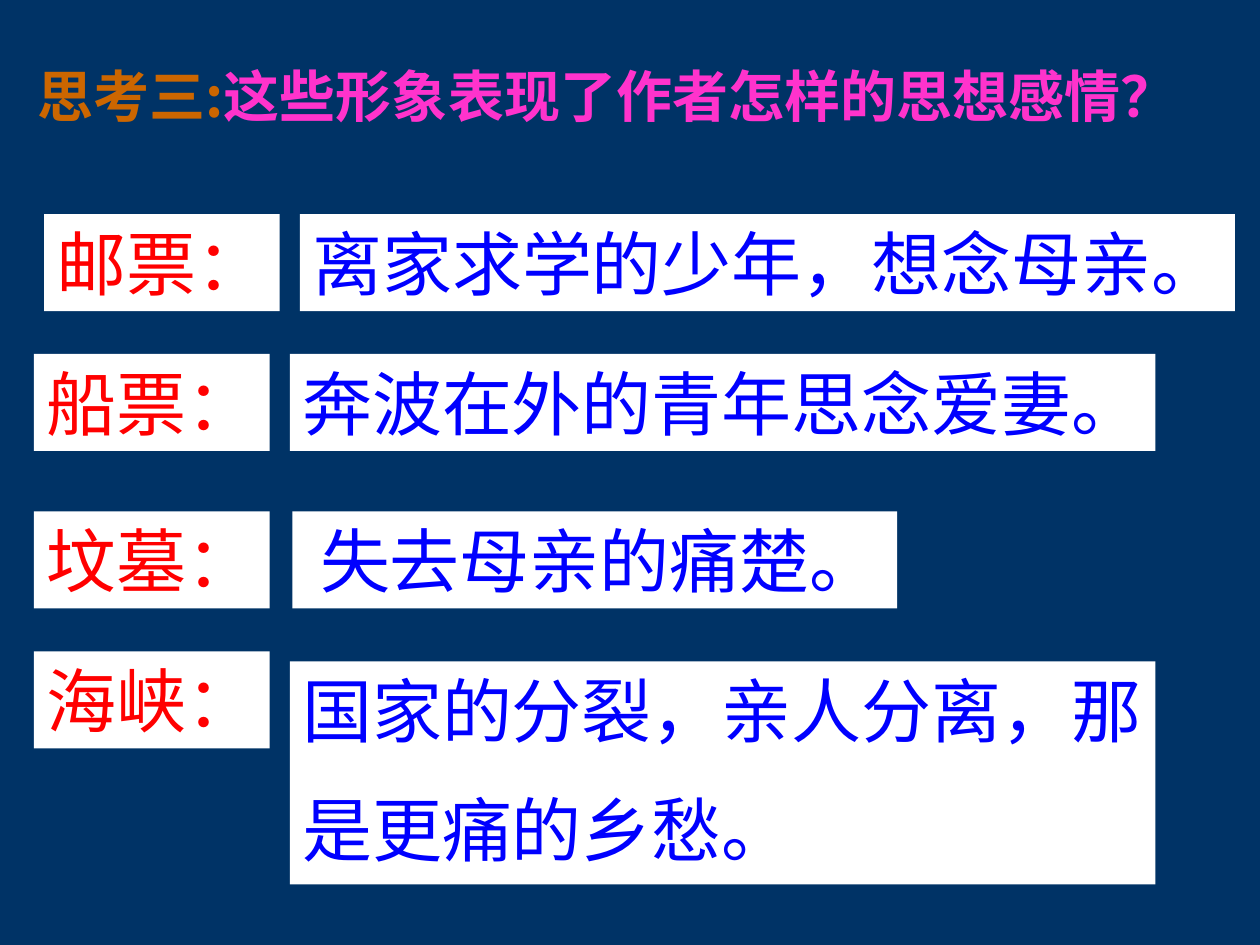
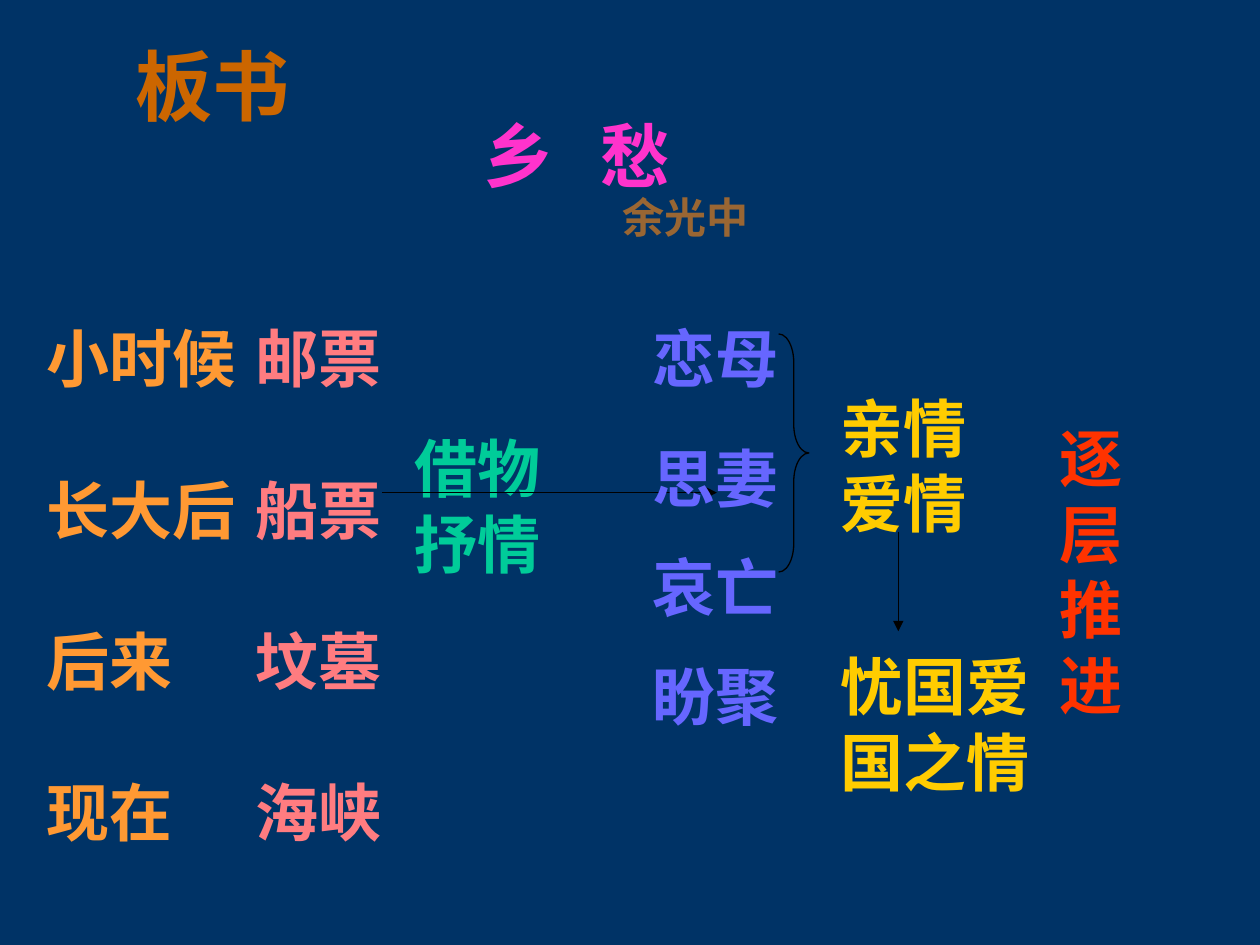
import pptx
import pptx.dml.color
import pptx.enum.shapes
import pptx.enum.text
import pptx.oxml.ns
import pptx.util
from lxml import etree
from pptx.util import Inches

SHAPES = pptx.enum.shapes.MSO_SHAPE
ANCHOR = pptx.enum.text.MSO_ANCHOR
qn = pptx.oxml.ns.qn

NAVY, WHITE, BLACK = "003366", "FFFFFF", "000000"
ORANGE, PINK, RED, BLUE = "CC6600", "FF33CC", "FF0000", "0000FF"
BROWN, AMBER, CORAL, GREEN = "996633", "FF9933", "FF7C80", "00CC99"
VIOLET, YELLOW, SCARLET = "6666FF", "FFCC00", "FF3300"


def rgb(value):
    return pptx.dml.color.RGBColor.from_string(value)


class Deck:
    """Holds the shared style and the current slide."""

    font = "Arial"
    title_font = "Noto Sans CJK SC"
    leading = 1.2

    def __init__(self):
        self.prs = pptx.Presentation()
        self.prs.slide_width = Inches(10)
        self.prs.slide_height = Inches(7.5)
        self.s = None

    def slide(self):
        self.s = self.prs.slides.add_slide(self.prs.slide_layouts[6])
        fill = self.s.background.fill
        fill.solid()
        fill.fore_color.rgb = rgb(NAVY)

    def run(self, p, text, size, color, bold, font):
        r = p.add_run()
        r.text = text
        r.font.size = pptx.util.Pt(size)
        r.font.bold = bold
        r.font.color.rgb = rgb(color)
        r.font.name = font
        etree.SubElement(r._r.get_or_add_rPr(), qn("a:ea"), typeface=font)

    def paragraphs(self, tf, lines, size, color, bold=True, gap=0):
        for i, line in enumerate(lines):
            p = tf.add_paragraph() if i else tf.paragraphs[0]
            p.alignment = pptx.enum.text.PP_ALIGN.LEFT
            p.line_spacing = pptx.util.Pt(size * self.leading)
            if i and gap:
                p.space_before = pptx.util.Pt(gap)
            self.run(p, line, size, color, bold, self.font)

    def box(self, x, y, w, h):
        sp = self.s.shapes.add_textbox(Inches(x), Inches(y), Inches(w), Inches(h))
        sp.text_frame.word_wrap = True
        return sp.text_frame

    def title(self, parts):
        tf = self.box(0.2, 0.44, 9.8, 0.63)
        tf.vertical_anchor = ANCHOR.MIDDLE
        for text, color in parts:
            self.run(tf.paragraphs[0], text, 32, color, True, self.title_font)

    def text(self, x, y, w, h, lines, color, size=36, gap=0, tab=None):
        tf = self.box(x, y, w, h)
        if tab:
            pPr = tf.paragraphs[0]._p.get_or_add_pPr()
            tabs = etree.SubElement(pPr, qn("a:tabLst"))
            etree.SubElement(tabs, qn("a:tab"), pos=str(Inches(tab)), algn="l")
        self.paragraphs(tf, lines, size, color, gap=gap)

    def card(self, x, y, w, h, lines, color, inset=0.1):
        sp = self.s.shapes.add_shape(
            SHAPES.RECTANGLE, Inches(x), Inches(y), Inches(w), Inches(h))
        sp.shadow.inherit = False
        sp.fill.solid()
        sp.fill.fore_color.rgb = rgb(WHITE)
        sp.line.fill.background()
        tf = sp.text_frame
        tf.word_wrap = False
        tf.vertical_anchor = ANCHOR.TOP
        tf.margin_left = Inches(inset)
        self.paragraphs(tf, lines, 40, color, bold=False, gap=20)

    def outline(self, line):
        line.color.rgb = rgb(BLACK)
        line.width = pptx.util.Pt(0.75)

    def arrow(self, x1, y1, x2, y2):
        c = self.s.shapes.add_connector(
            pptx.enum.shapes.MSO_CONNECTOR.STRAIGHT,
            Inches(x1), Inches(y1), Inches(x2), Inches(y2))
        self.outline(c.line)
        spPr = c._element.spPr
        etree.SubElement(spPr.find(qn("a:ln")), qn("a:tailEnd"), type="triangle")
        etree.SubElement(spPr, qn("a:effectLst"))

    def brace(self, x, y, w, h):
        sp = self.s.shapes.add_shape(
            SHAPES.RIGHT_BRACE, Inches(x), Inches(y), Inches(w), Inches(h))
        sp.shadow.inherit = False
        sp.fill.background()
        sp.adjustments[0] = 0.94
        self.outline(sp.line)


def feelings_slide(d):
    d.slide()
    d.title([("思考三:", ORANGE), ("这些形象表现了作者怎样的思想感情？", PINK)])
    for x, y, label in [(0.35, 1.7, "邮票："), (0.27, 2.81, "船票："),
                        (0.27, 4.06, "坟墓："), (0.27, 5.17, "海峡：")]:
        d.card(x, y, 1.87, 0.77, [label], RED)
    d.card(2.38, 1.7, 7.42, 0.77, ["离家求学的少年，想念母亲。"], BLUE)
    d.card(2.3, 2.81, 6.87, 0.77, ["奔波在外的青年思念爱妻。"], BLUE)
    d.card(2.32, 4.06, 4.8, 0.77, ["失去母亲的痛楚。"], BLUE, inset=0.22)
    d.card(2.3, 5.25, 6.87, 1.77, ["国家的分裂，亲人分离，那", "是更痛的乡愁。"], BLUE)


def board_slide(d):
    d.slide()
    d.text(3.74, 0.84, 3.58, 0.77, ["乡\t愁"], PINK, size=40, tab=0.93)
    d.text(4.84, 1.47, 2.77, 0.51, ["余光中"], BROWN, size=24)
    row_gap = 36 * d.leading
    d.text(0.27, 2.49, 3.58, 4.34, ["小时候", "长大后", "后来", "现在"], AMBER, gap=row_gap)
    d.text(1.93, 2.49, 2.08, 4.34, ["邮票", "船票", "坟墓", "海峡"], CORAL, gap=row_gap)
    d.text(3.19, 3.36, 2.54, 1.31, ["借物", "抒情"], GREEN)
    d.arrow(3.03, 3.91, 5.69, 3.91)
    for y, feeling in [(2.49, "恋母"), (3.44, "思妻"), (4.3, "哀亡"), (5.17, "盼聚")]:
        d.text(5.08, y, 1.9, 0.71, [feeling], VIOLET)
    d.brace(6.18, 2.65, 0.24, 1.89)
    d.text(6.57, 3.04, 2.77, 1.31, ["亲情", "爱情"], YELLOW)
    d.text(6.57, 5.09, 2.77, 1.31, ["忧国爱", "国之情"], YELLOW)
    d.arrow(7.13, 4.22, 7.13, 5.01)
    d.text(8.31, 3.28, 1.04, 2.52, list("逐层推进"), SCARLET)
    d.text(0.98, 0.26, 3.46, 0.84, ["板书"], ORANGE, size=44)


def main():
    d = Deck()
    feelings_slide(d)
    board_slide(d)
    d.prs.save("out.pptx")


if __name__ == "__main__":
    main()
